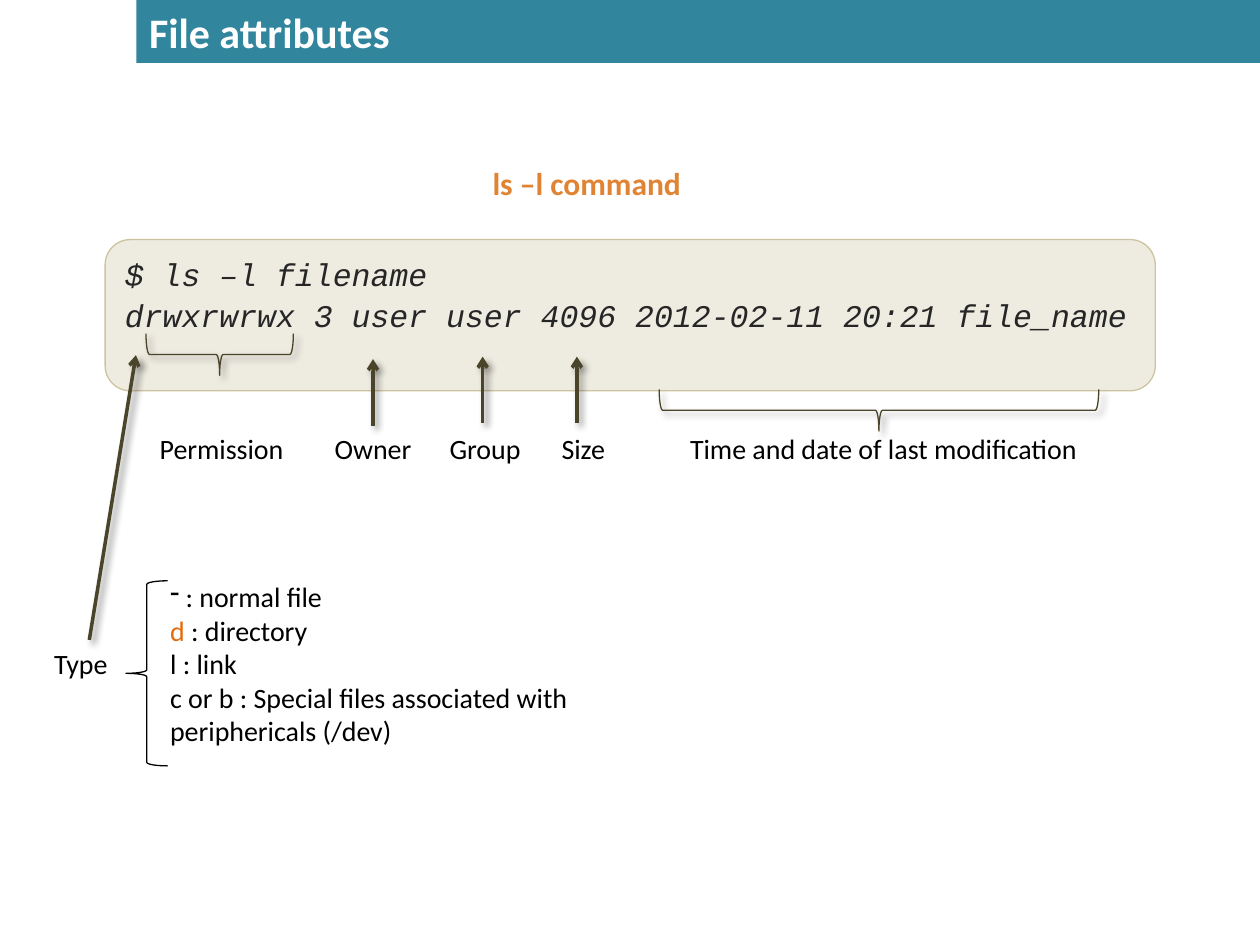
"""Build a slide that explains the file attributes listed by ls -l."""
from lxml.etree import SubElement
from pptx import Presentation
from pptx.dml.color import RGBColor
from pptx.enum.shapes import MSO_CONNECTOR as Link, MSO_SHAPE as Shape
from pptx.enum.text import MSO_ANCHOR as Anchor, PP_ALIGN as Align
from pptx.oxml.ns import qn
from pptx.util import Cm, Pt

TEAL = RGBColor(0x31, 0x85, 0x9C)
WHITE = RGBColor(0xFF, 0xFF, 0xFF)
BLACK = RGBColor(0x00, 0x00, 0x00)
ORANGE = RGBColor(0xE0, 0x84, 0x34)
DEEP_ORANGE = RGBColor(0xE4, 0x6C, 0x0A)
CREAM = RGBColor(0xEE, 0xEC, 0xE1)
SAND = RGBColor(0xCE, 0xC3, 0xA0)
CHARCOAL = RGBColor(0x26, 0x26, 0x26)
OLIVE = RGBColor(0x4A, 0x45, 0x2A)

HEADING = {"name": "Calibri", "size": Pt(24), "bold": True}
SUBHEADING = {"name": "Calibri", "size": Pt(18), "bold": True}
CODE = {"name": "Courier New", "size": Pt(18), "italic": True}
LABEL = {"name": "Calibri", "size": Pt(16)}


def add_span(para, text, style, color):
    span = para.add_run()
    span.text = text
    for name, value in style.items():
        setattr(span.font, name, value)
    span.font.color.rgb = color


def add_shadow(item):
    effects = item._element.spPr.find(qn("a:effectLst"))
    if effects is None:
        effects = SubElement(item._element.spPr, qn("a:effectLst"))
    shadow = SubElement(effects, qn("a:outerShdw"), blurRad=str(Pt(4)), dist=str(Pt(3)),
                        dir="2700000", algn="tl", rotWithShape="0")
    color = SubElement(shadow, qn("a:srgbClr"), val="000000")
    SubElement(color, qn("a:alpha"), val="43000")


deck = Presentation()
deck.slide_width, deck.slide_height = Cm(25.4), Cm(19.05)
slide = deck.slides.add_slide(deck.slide_layouts[5])
shapes = slide.shapes

title = shapes.title
title_format = {"left": Cm(2.75), "top": Cm(0), "width": Cm(22.65), "height": Cm(1.27)}
for name, value in title_format.items():
    setattr(title, name, value)
title.fill.solid()
title.fill.fore_color.rgb = TEAL
title.text_frame.vertical_anchor = Anchor.MIDDLE
title_para = title.text_frame.paragraphs[0]
title_para.alignment = Align.LEFT
add_span(title_para, "File attributes", HEADING, WHITE)

panel = shapes.add_shape(Shape.ROUNDED_RECTANGLE, Cm(2.12), Cm(4.83), Cm(21.17), Cm(3.05))
panel.shadow.inherit = False
panel.fill.solid()
panel.fill.fore_color.rgb = CREAM
panel.line.color.rgb = SAND
panel.line.width = Pt(0.75)
panel.text_frame.vertical_anchor = Anchor.TOP
panel.text_frame.text = "\n"
code_lines = ["$ ls –l filename", "drwxrwrwx 3 user user 4096 2012-02-11 20:21 file_name"]
for para, text in zip(panel.text_frame.paragraphs, code_lines):
    para.alignment = Align.LEFT
    para.line_spacing = 1.04
    para.space_after = Pt(1.5)
    add_span(para, text, CODE, CHARCOAL)

braces = [
    (4.01, 5.66, 2.97, 270, OLIVE, 0),
    (17.3, 3.84, 8.86, 270, OLIVE, 0),
    (2.54, 11.71, 3.73, 0, BLACK, 0.75),
]
for left, top, height, rotation, color, width in braces:
    brace = shapes.add_shape(Shape.LEFT_BRACE, Cm(left), Cm(top), Cm(0.84), Cm(height))
    brace.rotation = rotation
    brace.shadow.inherit = False
    brace.fill.background()
    brace.line.color.rgb = color
    brace.line.width = Pt(width)
    if rotation:
        add_shadow(brace)

labels = [
    ("ls –l command", 9.68, 3.18, 6.2, Align.LEFT, SUBHEADING, ORANGE),
    ("Type", 0.84, 12.9, 2.54, Align.LEFT, LABEL, BLACK),
    ("Permission", 2.97, 8.58, 3.28, Align.LEFT, LABEL, BLACK),
    ("Owner", 5.72, 8.58, 3.6, Align.CENTER, LABEL, BLACK),
    ("Group", 8.61, 8.58, 2.34, Align.CENTER, LABEL, BLACK),
    ("Size", 10.59, 8.58, 2.34, Align.CENTER, LABEL, BLACK),
    ("Time and date of last modification", 13.39, 8.58, 8.84, Align.CENTER, LABEL, BLACK),
]
label_boxes = {}
for text, left, top, width, alignment, style, color in labels:
    box = shapes.add_textbox(Cm(left), Cm(top), Cm(width), Cm(0.94))
    box.text_frame.word_wrap = True
    para = box.text_frame.paragraphs[0]
    para.alignment = alignment
    add_span(para, text, style, color)
    label_boxes[text] = box

file_types = [
    [(" : normal file", BLACK)],
    [("d", DEEP_ORANGE), (" : directory", BLACK)],
    [("l : link", BLACK)],
    [("c or b : Special files associated with periphericals (/dev)", BLACK)],
]
types_box = shapes.add_textbox(Cm(3.18), Cm(11.56), Cm(9.37), Cm(3.68))
types_box.text_frame.word_wrap = True
types_box.text_frame.text = "\n" * (len(file_types) - 1)
for para, spans in zip(types_box.text_frame.paragraphs, file_types):
    for text, color in spans:
        add_span(para, text, LABEL, color)
dash_format = types_box.text_frame.paragraphs[0]._p.get_or_add_pPr()
SubElement(dash_format, qn("a:buFontTx"))
SubElement(dash_format, qn("a:buChar"), char="-")

arrows = [
    ("Type", 1.8, 12.9, 2.74, 7.16),
    ("Owner", 7.52, 8.58, 7.52, 7.24),
    ("Group", 9.73, 8.53, 9.73, 7.19),
    ("Size", 11.63, 8.53, 11.63, 7.19),
]
for label, *ends in arrows:
    arrow = shapes.add_connector(Link.STRAIGHT, *map(Cm, ends))
    if label == "Owner":
        arrow.begin_connect(label_boxes[label], 0)
    arrow.line.color.rgb = OLIVE
    arrow.line.width = Pt(0)
    SubElement(arrow.line._get_or_add_ln(), qn("a:tailEnd"), type="arrow")
    add_shadow(arrow)

deck.save("out.pptx")
